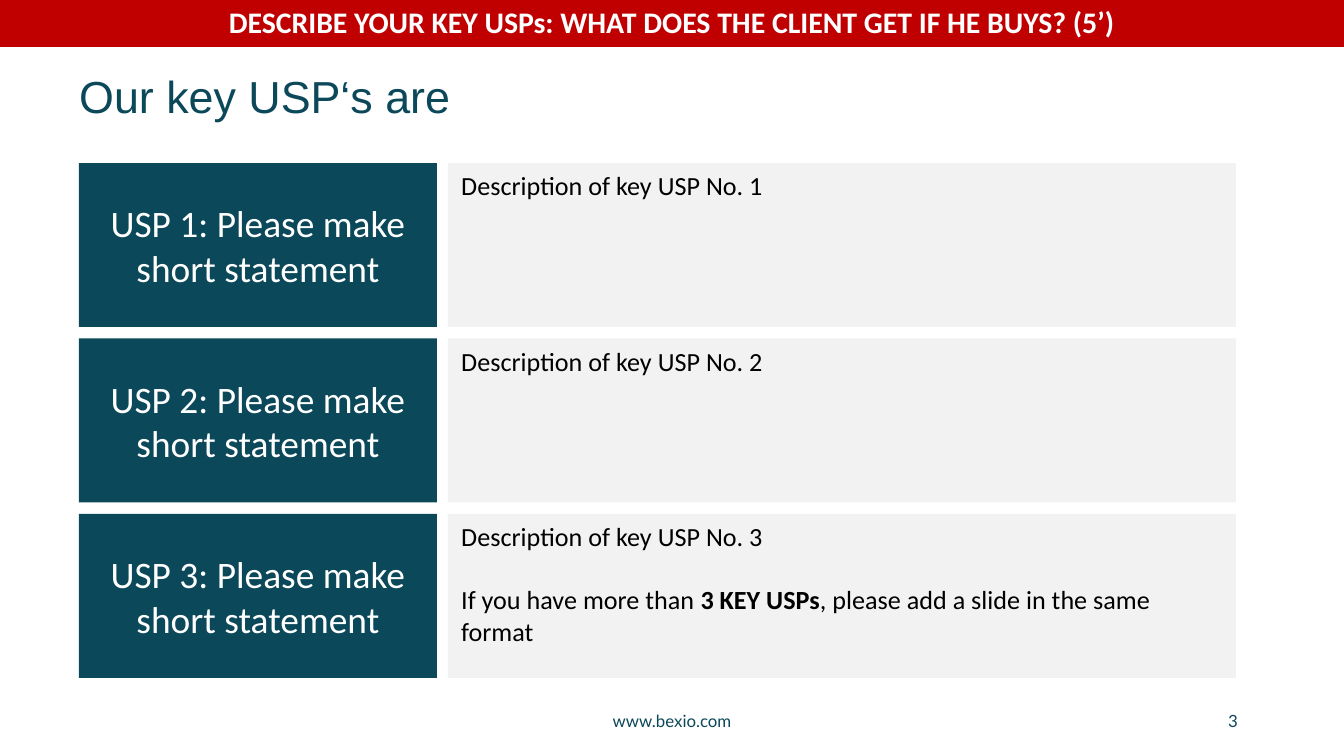
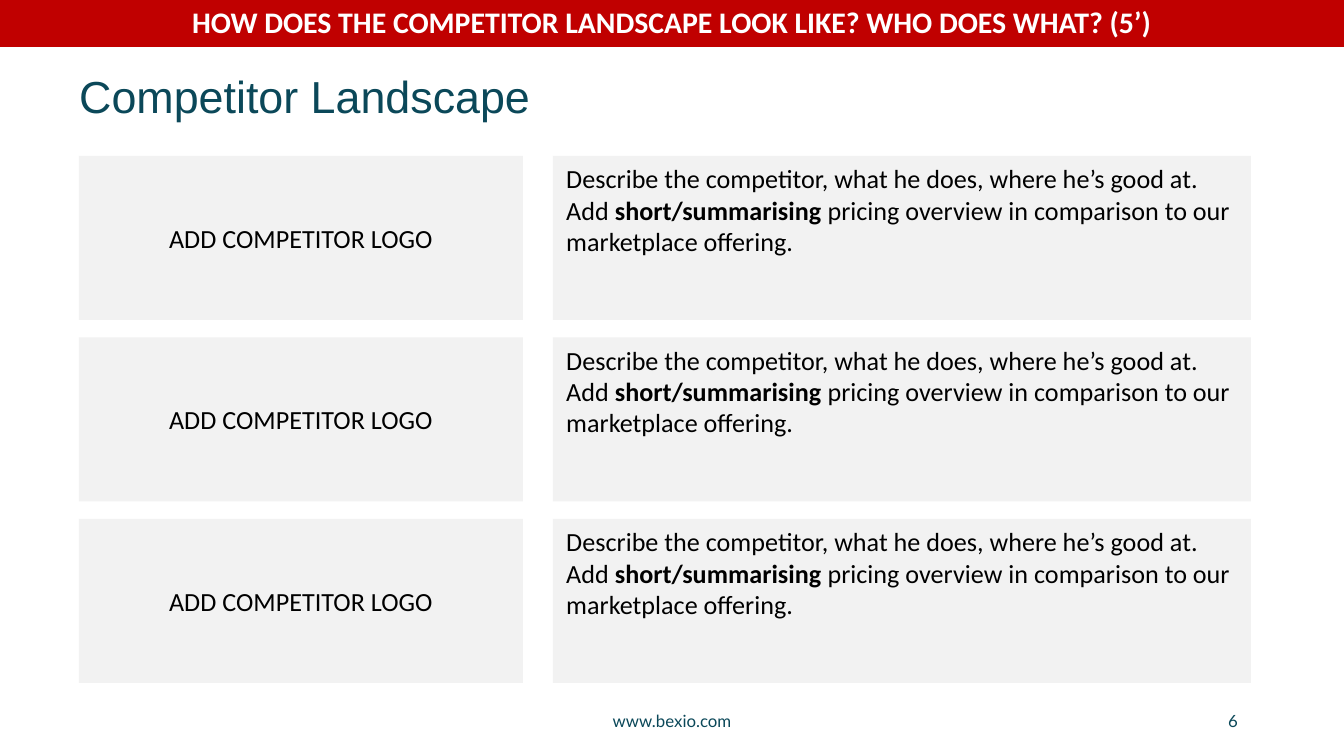
"""Build the USP and competitor landscape slides of a partner pitch."""
from dataclasses import dataclass

from pptx import Presentation
from pptx import util as u
from pptx.dml import color
from pptx.enum import shapes, text

EMU_PER_PX = 914400 / 134.4
WIDTH, HEIGHT = 1344, 756
ROW_HEIGHT = 164


@dataclass(frozen=True)
class Theme:
    """Colours, fonts and type sizes shared by the slides."""
    teal: str = "0B4859"
    red: str = "C00000"
    grey: str = "F2F2F2"
    white: str = "FFFFFF"
    black: str = "000000"
    title_font: str = "Arial"
    body_font: str = "Calibri"
    footer_font: str = "Lato"
    title: int = 24
    statement: int = 20
    band: int = 16
    body: int = 14
    footer: int = 9
    paragraph_gap: int = 17


T = Theme()
LEFT, CENTER, RIGHT = text.PP_ALIGN.LEFT, text.PP_ALIGN.CENTER, text.PP_ALIGN.RIGHT
TOP, MIDDLE = text.MSO_ANCHOR.TOP, text.MSO_ANCHOR.MIDDLE

TITLE = dict(font=T.title_font, size=T.title, ink=T.teal)
FOOTER = dict(font=T.footer_font, size=T.footer, ink=T.teal, anchor=MIDDLE)
BAND = dict(size=T.band, ink=T.white, bold=True, align=CENTER)
STATEMENT = dict(size=T.statement, ink=T.white, align=CENTER, anchor=MIDDLE)
LOGO = dict(align=CENTER, anchor=MIDDLE)


def px(n):
    """Turn pixels into EMU."""
    return u.Emu(round(n * EMU_PER_PX))


def set_attrs(obj, values):
    """Set every attribute named in a dict."""
    for name, value in values.items():
        setattr(obj, name, value)


def write(sp, paragraphs, font=T.body_font, size=T.body, ink=T.black,
          bold=False, align=LEFT, anchor=TOP):
    """Write paragraphs, each a list of runs; every second run is emphasised."""
    tf = sp.text_frame
    set_attrs(tf, dict(word_wrap=True, vertical_anchor=anchor))
    for i, runs in enumerate(paragraphs):
        p = tf.add_paragraph() if i else tf.paragraphs[0]
        p.alignment = align
        if i:
            p.space_before = u.Pt(T.paragraph_gap)
        for j, words in enumerate(runs):
            r = p.add_run()
            r.text = words
            set_attrs(r.font, dict(name=font, size=u.Pt(size), bold=bold or j % 2 == 1))
            r.font.color.rgb = color.RGBColor.from_string(ink)


def add_label(s, box, words, **style):
    """Add a text box with one line."""
    write(s.shapes.add_textbox(*map(px, box)), [[words]], **style)


def add_panel(s, box, fill, paragraphs, **style):
    """Add a filled rectangle with text."""
    sp = s.shapes.add_shape(shapes.MSO_SHAPE.RECTANGLE, *map(px, box))
    sp.shadow.inherit = False
    sp.fill.solid()
    sp.fill.fore_color.rgb = color.RGBColor.from_string(fill)
    sp.line.fill.background()
    write(sp, paragraphs, **style)


def add_rows(s, top, bottom, left_col, right_col, rows, fill, style):
    """Spread rows of a heading panel and a description panel evenly."""
    pitch = (bottom - top - ROW_HEIGHT) / (len(rows) - 1)
    for i, (heading, description) in enumerate(rows):
        y = top + i * pitch
        for (x, w), colour, paragraphs, look in (
                (left_col, fill, [[heading]], style),
                (right_col, T.grey, description, {})):
            add_panel(s, (x, y, w, ROW_HEIGHT), colour, paragraphs, **look)


def add_page(prs, band, title, number):
    """Add a slide with its band, title and footer."""
    s = prs.slides.add_slide(prs.slide_layouts[6])
    add_panel(s, (0, -3, WIDTH, 50), T.red, [[band]], **BAND)
    add_label(s, (66, 62, 1212, 78), title, **TITLE)
    add_label(s, (445, 700, 454, 41), "www.bexio.com", align=CENTER, **FOOTER)
    add_label(s, (949, 700, 302, 41), str(number), align=RIGHT, **FOOTER)
    return s


def add_usps(prs):
    """Add the slide of key USPs."""
    s = add_page(prs, "DESCRIBE YOUR KEY USPs: WHAT DOES THE CLIENT GET IF HE BUYS? (5’)",
                 "Our key USP‘s are", 3)
    rows = [(f"USP {n}: Please make short statement", [[f"Description of key USP No. {n}"]])
            for n in (1, 2, 3)]
    rows[-1][1].append(["If you have more than ", "3 KEY USPs",
                        ", please add a slide in the same format"])
    add_rows(s, 163, 678, (79, 358), (448, 788), rows, T.teal, STATEMENT)


def add_competitors(prs):
    """Add the slide of the competitor landscape."""
    s = add_page(prs, "HOW DOES THE COMPETITOR LANDSCAPE LOOK LIKE? WHO DOES WHAT? (5’)",
                 "Competitor Landscape", 6)
    description = [["Describe the competitor, what he does, where he’s good at. Add ",
                    "short/summarising",
                    " pricing overview in comparison to our marketplace offering."]]
    rows = [("ADD COMPETITOR LOGO", description)] * 3
    add_rows(s, 156, 683, (79, 444), (553, 698), rows, T.grey, LOGO)


def main():
    """Build and save the presentation."""
    prs = Presentation()
    set_attrs(prs, dict(slide_width=px(WIDTH), slide_height=px(HEIGHT)))
    add_usps(prs)
    add_competitors(prs)
    prs.save("out.pptx")


if __name__ == "__main__":
    main()
